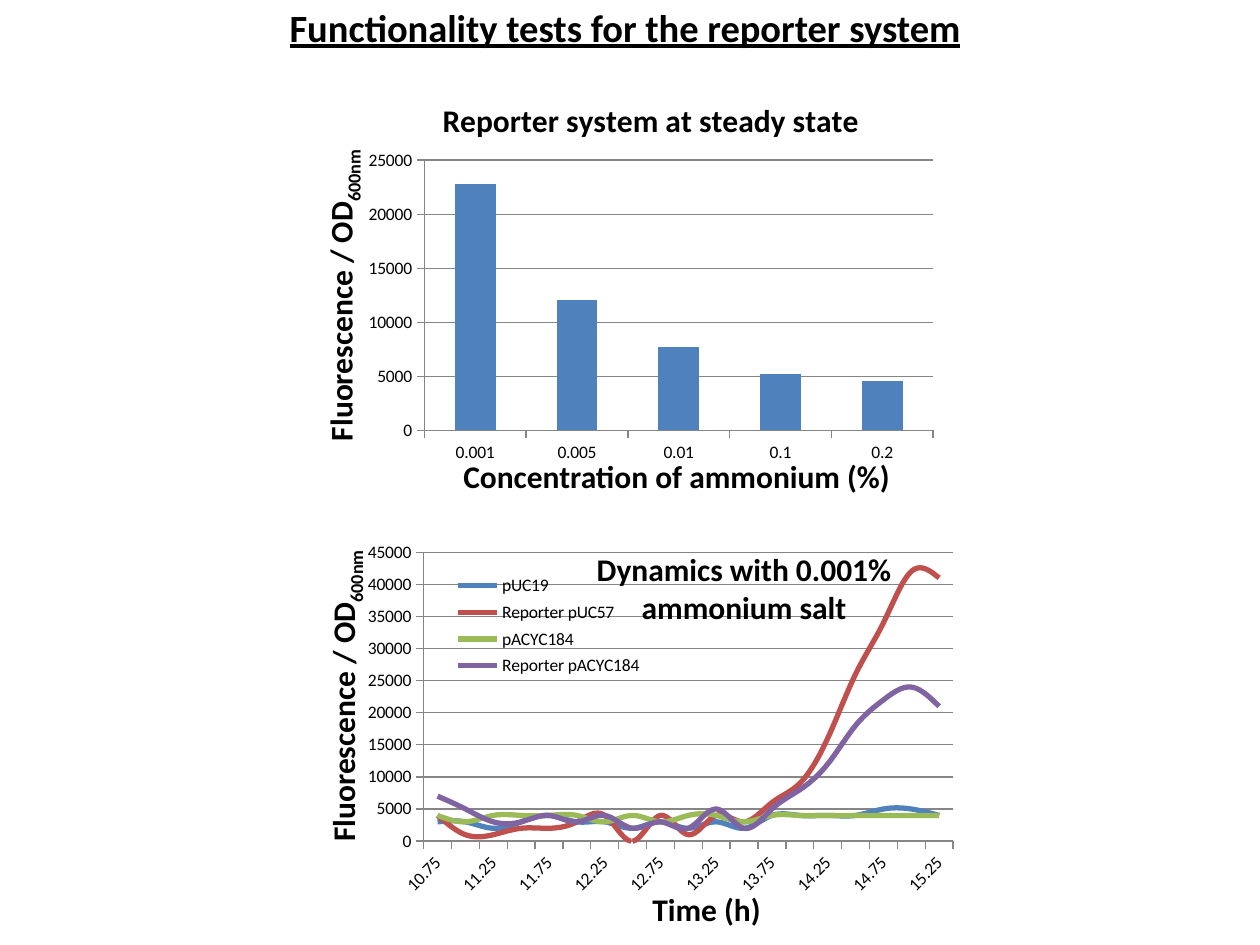
import lxml.etree
import pptx
import pptx.chart.data
import pptx.dml.color
import pptx.enum.chart
import pptx.enum.text
import pptx.oxml.ns
import pptx.util
from pptx.util import Cm, Pt

FONT = "Calibri"
BLACK = "000000"
GREY = "868686"
BLUE, RED, GREEN, PURPLE = "4F81BD", "C0504D", "9BBB59", "8064A2"
ChartType = pptx.enum.chart.XL_CHART_TYPE


def color(value):
    return pptx.dml.color.RGBColor.from_string(value)


def set_layout(parent, index, x, y, width, height, inner=False):
    """Place a chart part by fractions of the chart's size."""
    qn = pptx.oxml.ns.qn
    for old in parent.findall(qn("c:layout")):
        parent.remove(old)
    layout = lxml.etree.Element(qn("c:layout"))
    manual = lxml.etree.SubElement(layout, qn("c:manualLayout"))
    settings = [("layoutTarget", "inner")] if inner else []
    settings += [("xMode", "edge"), ("yMode", "edge"),
                 ("x", x), ("y", y), ("w", width), ("h", height)]
    for name, value in settings:
        lxml.etree.SubElement(manual, qn("c:" + name)).set("val", str(value))
    parent.insert(index, layout)


class SlideBuilder:
    def __init__(self, slide):
        self.slide = slide

    def style(self, font, size, bold=True, underline=None):
        font.name, font.size = FONT, Pt(size)
        font.bold, font.underline = bold, underline
        font.color.rgb = color(BLACK)

    def text(self, text, left, top, width, height, size=18, subscript="",
             rotation=0, underline=None, wrap=False):
        box = self.slide.shapes.add_textbox(Cm(left), Cm(top), Cm(width), Cm(height))
        box.rotation = rotation
        frame = box.text_frame
        frame.word_wrap = wrap
        frame.auto_size = pptx.enum.text.MSO_AUTO_SIZE.SHAPE_TO_FIT_TEXT
        paragraph = frame.paragraphs[0]
        paragraph.add_run().text = text
        if wrap:
            paragraph.alignment = pptx.enum.text.PP_ALIGN.CENTER
        if subscript:
            run = paragraph.add_run()
            run.text = subscript
            run._r.get_or_add_rPr().set("baseline", "-25000")
        self.style(paragraph.font, size, underline=underline)

    def chart(self, kind, categories, series, box, plot_box, maximum):
        """Add a chart; series holds (name, values, colour) rows."""
        data = pptx.chart.data.CategoryChartData()
        data.categories = categories
        for name, values, _ in series:
            data.add_series(name, values)
        frame = self.slide.shapes.add_chart(kind, *map(Cm, box), data)
        chart = frame.chart
        self.style(chart.font, 10, bold=False)
        chart.has_title = chart.has_legend = False
        plot = chart.plots[0]
        plot.vary_by_categories = False
        for item, (_, _, shade) in zip(plot.series, series):
            if kind == ChartType.LINE:
                item.smooth = True
                item.format.line.width = Pt(3)
                item.format.line.color.rgb = color(shade)
                item.marker.style = pptx.enum.chart.XL_MARKER_STYLE.NONE
            else:
                item.format.fill.solid()
                item.format.fill.fore_color.rgb = color(shade)
        value_axis = chart.value_axis
        value_axis.minimum_scale, value_axis.maximum_scale = 0, maximum
        value_axis.major_unit = 5000
        value_axis.has_major_gridlines = True
        for part in (value_axis, chart.category_axis, value_axis.major_gridlines):
            part.format.line.color.rgb = color(GREY)
            part.format.line.width = Pt(0.75)
        for axis in (value_axis, chart.category_axis):
            axis.major_tick_mark = pptx.enum.chart.XL_TICK_MARK.OUTSIDE
        set_layout(chart.plots[0]._element.getparent(), 0, *plot_box, inner=True)
        return chart

    def chart_title(self, chart, text):
        chart.has_title = True
        paragraph = chart.chart_title.text_frame.paragraphs[0]
        paragraph.add_run().text = text
        self.style(paragraph.font, 18)

    def overlay_legend(self, chart, *box):
        chart.has_legend = True
        legend = chart.legend
        legend.position = pptx.enum.chart.XL_LEGEND_POSITION.RIGHT
        legend.include_in_layout = True
        self.style(legend.font, 10, bold=False)
        set_layout(legend._element, 1, *box)

    def slant_labels(self, axis):
        self.style(axis.tick_labels.font, 10, bold=False)
        body = axis._element.find(".//" + pptx.oxml.ns.qn("a:bodyPr"))
        body.set("rot", "-2700000")
        body.set("vert", "horz")


def main():
    presentation = pptx.Presentation()
    presentation.slide_width, presentation.slide_height = Cm(25.4), Cm(19.05)
    builder = SlideBuilder(presentation.slides.add_slide(presentation.slide_layouts[6]))

    steady_state = builder.chart(
        ChartType.COLUMN_CLUSTERED, ["0.001", "0.005", "0.01", "0.1", "0.2"],
        [("Series 1", [22800, 12100, 7700, 5200, 4600], BLUE)],
        (7.19, 1.57, 11.86, 7.9), (0.115, 0.21, 0.865, 0.69), 25000)
    steady_state.plots[0].gap_width = 150
    builder.chart_title(steady_state, "Reporter system at steady state")
    builder.text("Concentration of ammonium (%)", 9.09, 9.09, 9.19, 1.02)
    builder.text("Functionality tests for the reporter system",
                 5.59, -0.05, 14.2, 1.19, size=22, underline=True)

    thousands = [
        ("pUC19", BLUE, [3, 3, 2, 3, 4, 3, 3, 2, 3, 2, 3, 2, 4, 4, 4, 4, 5, 5, 4]),
        ("Reporter pUC57", RED,
         [4, 1, 1, 2, 2, 3, 4, 0, 4, 1, 4, 3, 6, 9, 16, 26, 34, 42, 41]),
        ("pACYC184", GREEN, [4, 3, 4, 4, 4, 4, 3, 4, 3, 4, 4, 3, 4, 4, 4, 4, 4, 4, 4]),
        ("Reporter pACYC184", PURPLE,
         [7, 5, 3, 3, 4, 3, 4, 2, 3, 2, 5, 2, 5, 8, 12, 18, 22, 24, 21]),
    ]
    hours = [f"{10.75 + 0.25 * step:g}" for step in range(19)]
    dynamics = builder.chart(
        ChartType.LINE, hours,
        [(name, [1000 * value for value in values], shade)
         for name, shade, values in thousands],
        (7.19, 10.8, 12.27, 7.42), (0.11, 0.045, 0.87, 0.785), 45000)
    builder.overlay_legend(dynamics, 0.15, 0.09, 0.33, 0.31)
    builder.slant_labels(dynamics.category_axis)

    builder.text("Time (h)", 12.9, 17.81, 2.72, 1.02)
    for left, top in ((3.61, 13.41), (3.56, 5.33)):
        builder.text("Fluorescence / OD", left, top, 6.6, 1.02,
                     subscript="600nm", rotation=270)
    builder.text("Dynamics with 0.001% ammonium salt", 11.61, 10.97, 6.78, 1.8, wrap=True)
    presentation.save("out.pptx")


if __name__ == "__main__":
    main()
